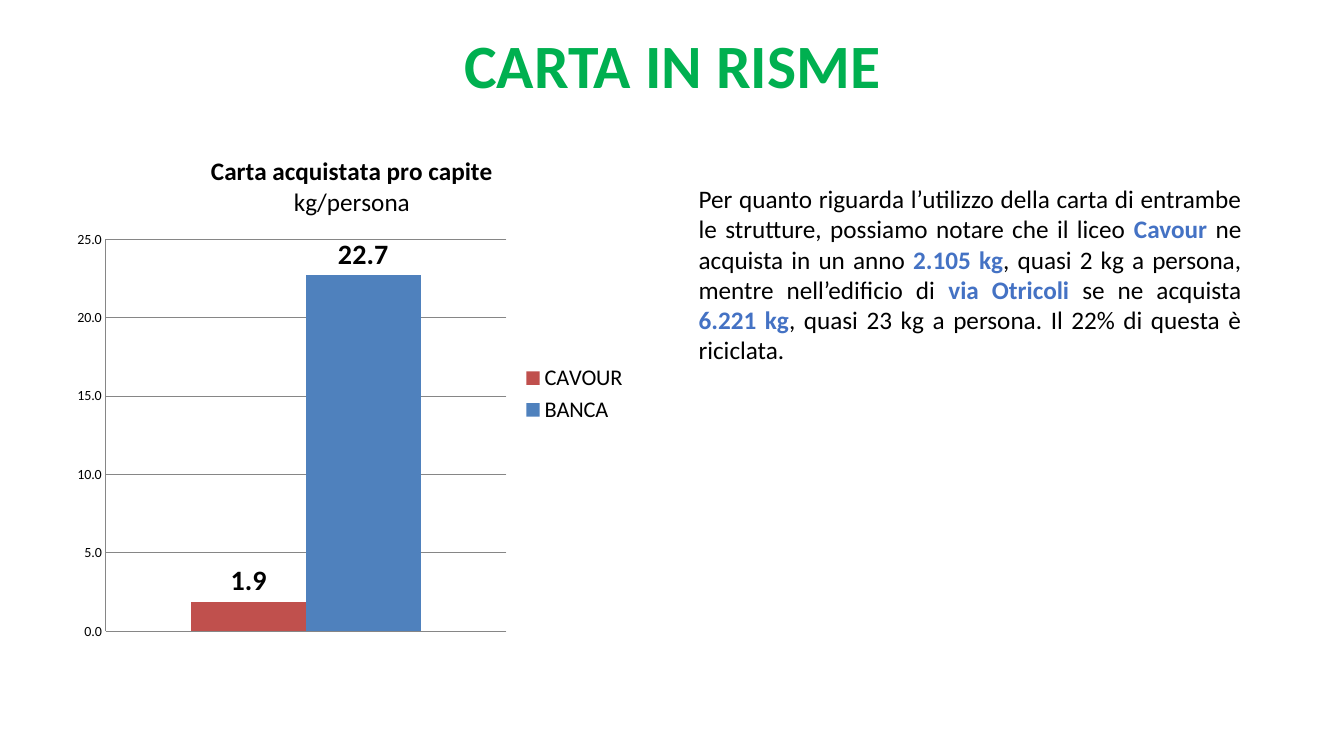
from dataclasses import dataclass

from lxml.etree import SubElement as Sub
from pptx import Presentation
from pptx.chart.data import CategoryChartData as ChartData
from pptx.dml.color import RGBColor as RGB
from pptx.enum.chart import XL_CHART_TYPE as Kind
from pptx.enum.chart import XL_LABEL_POSITION as LabelPos
from pptx.enum.chart import XL_LEGEND_POSITION as LegendPos
from pptx.enum.chart import XL_TICK_MARK as Tick
from pptx.enum.text import MSO_ANCHOR as Anchor
from pptx.enum.text import PP_ALIGN as Align
from pptx.oxml.ns import qn
from pptx.util import Inches, Pt


@dataclass(frozen=True)
class Theme:
    font: str = "Calibri"
    ink: str = "000000"
    green: str = "00B050"
    accent: str = "4472C4"
    red: str = "C0504D"
    blue: str = "4F81BD"
    grid: str = "868686"
    title: int = 44
    body: int = 18
    value: int = 20
    legend: int = 16
    axis: int = 10


THEME = Theme()


def style(font, size, color=THEME.ink, bold=False):
    font.name = THEME.font
    font.size = Pt(size)
    font.bold = bold
    font.color.rgb = RGB.from_string(color)


def add_run(para, text, size, color=THEME.ink, bold=False):
    run = para.add_run()
    run.text = text
    style(run.font, size, color, bold)


def add_box(slide, box, align, anchor=Anchor.TOP):
    frame = slide.shapes.add_textbox(*map(Inches, box)).text_frame
    frame.word_wrap = True
    frame.vertical_anchor = anchor
    para = frame.paragraphs[0]
    para.alignment = align
    return para


def add_title(slide, box):
    para = add_box(slide, box, Align.CENTER, Anchor.MIDDLE)
    para.line_spacing = 0.9
    add_run(para, "CARTA IN RISME", THEME.title, THEME.green, True)


def add_body(slide, box):
    para = add_box(slide, box, Align.JUSTIFY)
    # Plain and highlighted parts alternate
    parts = [
        "Per quanto riguarda l’utilizzo della carta di entrambe le strutture, "
        "possiamo notare che il liceo ",
        "Cavour ",
        "ne acquista in un anno ",
        "2.105 kg",
        ", quasi 2 kg a persona, mentre nell’edificio di ",
        "via Otricoli ",
        "se ne acquista ",
        "6.221 kg",
        ", quasi 23 kg a persona. Il 22% di questa è riciclata.",
    ]
    for i, text in enumerate(parts):
        key = i % 2 == 1
        add_run(para, text, THEME.body, THEME.accent if key else THEME.ink, key)


def place_plot(chart, **area):
    # Fix the inner plot area as fractions of the chart
    plot = chart.plots[0]._element.getparent()
    for old in plot.findall(qn("c:layout")):
        plot.remove(old)
    layout = plot.makeelement(qn("c:layout"))
    plot.insert(0, layout)
    manual = Sub(layout, qn("c:manualLayout"))
    Sub(manual, qn("c:layoutTarget"), val="inner")
    for mode in ("xMode", "yMode"):
        Sub(manual, qn("c:" + mode), val="edge")
    for name, part in area.items():
        Sub(manual, qn("c:" + name), val=str(part))


def add_graph(slide, box):
    data = ChartData(number_format="0.0")
    data.categories = ["1"]
    data.add_series("CAVOUR", [1.9])
    data.add_series("BANCA", [22.7])
    chart = slide.shapes.add_chart(
        Kind.COLUMN_CLUSTERED, *map(Inches, box), data).chart
    style(chart.font, THEME.axis)

    # Heading
    frame = chart.chart_title.text_frame
    add_run(frame.paragraphs[0], "Carta acquistata pro capite", THEME.body, bold=True)
    add_run(frame.add_paragraph(), "kg/persona", THEME.body)
    chart.chart_title.include_in_layout = False

    # Axes
    chart.category_axis.visible = False
    axis = chart.value_axis
    axis.minimum_scale, axis.maximum_scale, axis.major_unit = 0, 25, 5
    axis.major_tick_mark = axis.minor_tick_mark = Tick.NONE
    axis.tick_labels.number_format = "0.0"
    axis.tick_labels.number_format_is_linked = False
    for line in (axis.format.line, axis.major_gridlines.format.line):
        line.color.rgb = RGB.from_string(THEME.grid)
        line.width = Pt(0.75)

    # Columns and values
    plot = chart.plots[0]
    plot.gap_width = 150
    plot.overlap = 0
    plot.vary_by_categories = False
    for series, color in zip(plot.series, (THEME.red, THEME.blue)):
        fill = series.format.fill
        fill.solid()
        fill.fore_color.rgb = RGB.from_string(color)
        labels = series.data_labels
        labels.show_value = True
        labels.number_format = "0.0"
        labels.number_format_is_linked = False
        labels.position = LabelPos.OUTSIDE_END
        style(labels.font, THEME.value, bold=True)

    # Legend
    chart.has_legend = True
    chart.legend.position = LegendPos.RIGHT
    chart.legend.include_in_layout = False
    style(chart.legend.font, THEME.legend)
    place_plot(chart, x=0.07, y=0.2, w=0.7, h=0.76)


def main():
    deck = Presentation()
    deck.slide_width, deck.slide_height = Inches(13.33), Inches(7.5)
    slide = deck.slides.add_slide(deck.slide_layouts[6])
    add_title(slide, (0.92, 0, 11.5, 1.35))
    add_body(slide, (6.83, 1.77, 5.58, 2.22))
    add_graph(slide, (0.65, 1.35, 5.68, 5.12))
    deck.save("out.pptx")


if __name__ == "__main__":
    main()
